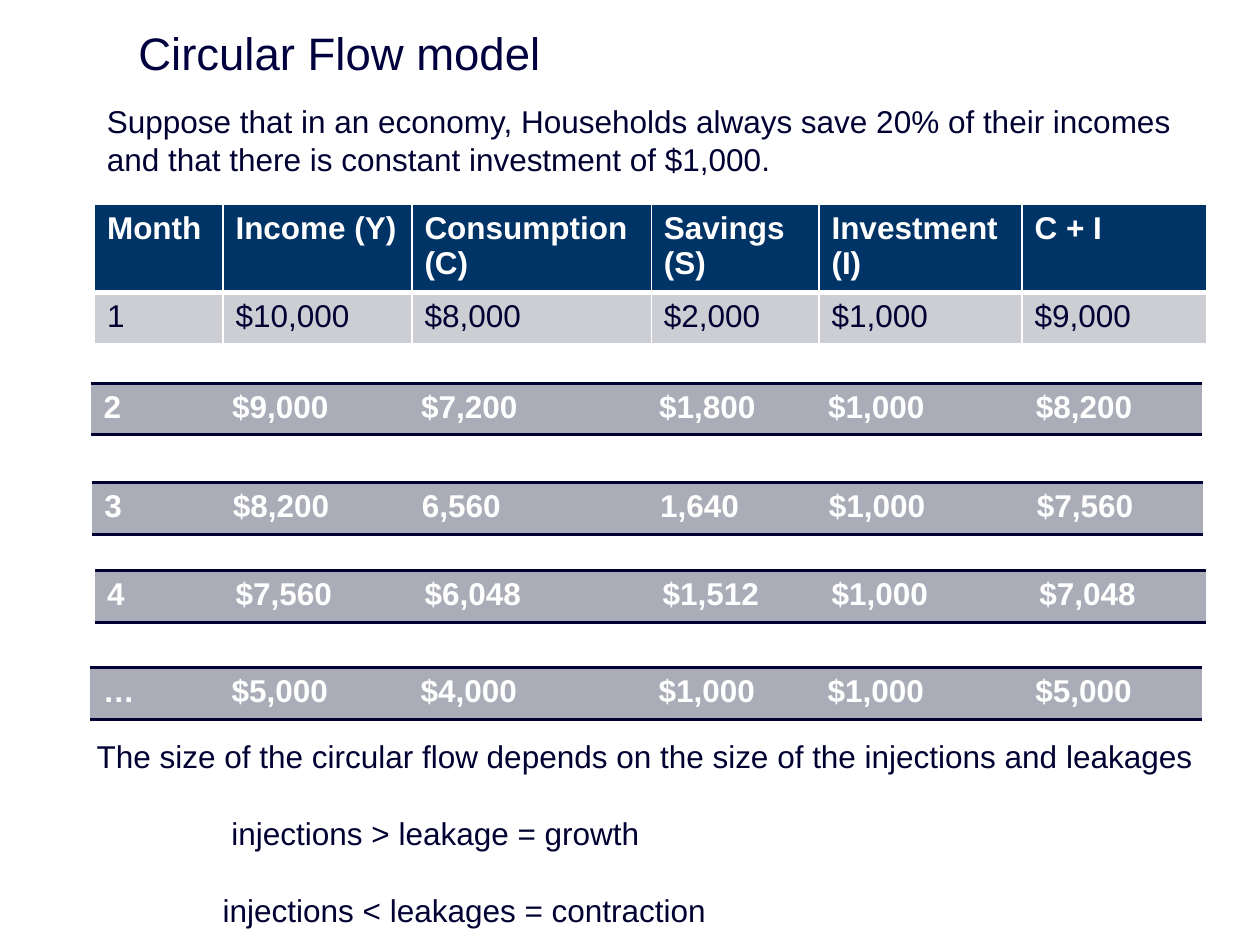
from dataclasses import dataclass

from lxml import etree
from pptx import Presentation
from pptx import util as u
from pptx.dml.color import RGBColor
from pptx.enum import text as t
from pptx.oxml import ns

COLORS = {
    "title": "00003E",
    "text": "000032",
    "white": "FFFFFF",
    "header": "003366",
    "first_month": "CCCED3",
    "later_month": "AAADB8",
}
FONT = "Arial"
BODY_SIZE = 18
ROW_HEIGHT = 29.5
FIRST_WIDTHS = [73.4, 108, 136.8, 95.8, 116, 105.8]
LATER_WIDTHS = [73.4, 108, 136.1, 96.5, 118.8, 102.2]


@dataclass
class Border:
    color: str
    width: float


@dataclass
class RowStyle:
    fill: str
    color: str
    bold: bool
    height: float
    borders: dict[str, Border]


@dataclass
class Month:
    left: float
    top: float
    values: list[str]


THIN = Border("white", 1)
THICK = Border("white", 3)
RULE = Border("text", 2)
HEADER_STYLE = RowStyle("header", "white", True, 47,
                        {"L": THIN, "R": THIN, "T": THIN, "B": THICK})
FIRST_STYLE = RowStyle("first_month", "text", False, ROW_HEIGHT,
                       {"L": THIN, "R": THIN, "T": THICK, "B": THIN})
LATER_STYLE = RowStyle("later_month", "white", True, ROW_HEIGHT,
                       {"T": RULE, "B": RULE})

HEADINGS = ["Month", "Income (Y)", "Consumption (C)", "Savings (S)",
            "Investment (I)", "C + I"]
FIRST_MONTH = ["1", "$10,000", "$8,000", "$2,000", "$1,000", "$9,000"]
LATER_MONTHS = [
    Month(52, 219, ["2", "$9,000", "$7,200", "$1,800", "$1,000", "$8,200"]),
    Month(52.5, 275.8, ["3", "$8,200", "6,560", "1,640", "$1,000", "$7,560"]),
    Month(54, 326, ["4", "$7,560", "$6,048", "$1,512", "$1,000", "$7,048"]),
    Month(51.7, 381.6, ["…", "$5,000", "$4,000", "$1,000", "$1,000", "$5,000"]),
]


def write(paragraph, content: str, *, size: float = BODY_SIZE,
          color: str = "text", bold: bool = False,
          before: float = 0, indent: float = 0) -> None:
    if indent:
        paragraph._p.get_or_add_pPr().set("marL", str(u.Pt(indent)))
    paragraph.space_before = u.Pt(before)
    run = paragraph.add_run()
    run.text = content
    run.font.name = FONT
    run.font.size = u.Pt(size)
    run.font.bold = bold
    run.font.color.rgb = RGBColor.from_string(COLORS[color])


def add_text_frame(slide, left: float, top: float, width: float, height: float):
    box = slide.shapes.add_textbox(u.Pt(left), u.Pt(top), u.Pt(width), u.Pt(height))
    box.text_frame.word_wrap = True
    return box.text_frame


def set_borders(cell, borders: dict[str, Border]) -> None:
    """Draw the given sides and hide the others."""
    properties = cell._tc.get_or_add_tcPr()
    for index, side in enumerate("LRTB"):
        line = etree.Element(ns.qn(f"a:ln{side}"))
        border = borders.get(side)
        if border:
            line.set("w", str(u.Pt(border.width)))
            fill = etree.SubElement(line, ns.qn("a:solidFill"))
            etree.SubElement(fill, ns.qn("a:srgbClr"), val=COLORS[border.color])
        else:
            etree.SubElement(line, ns.qn("a:noFill"))
        properties.insert(index, line)


def add_table(slide, left: float, top: float, widths: list[float],
              rows: list[tuple[RowStyle, list[str]]]) -> None:
    height = sum(style.height for style, _ in rows)
    frame = slide.shapes.add_table(len(rows), len(widths), u.Pt(left), u.Pt(top),
                                   u.Pt(sum(widths)), u.Pt(height))
    table = frame.table
    table.first_row = table.horz_banding = False
    for column, width in zip(table.columns, widths):
        column.width = u.Pt(width)
    for row, (style, values) in zip(table.rows, rows):
        row.height = u.Pt(style.height)
        for cell, value in zip(row.cells, values):
            cell.fill.solid()
            cell.fill.fore_color.rgb = RGBColor.from_string(COLORS[style.fill])
            set_borders(cell, style.borders)
            write(cell.text_frame.paragraphs[0], value,
                  color=style.color, bold=style.bold)


def main() -> None:
    presentation = Presentation()
    presentation.slide_width = u.Pt(720)
    presentation.slide_height = u.Pt(540)
    slide = presentation.slides.add_slide(presentation.slide_layouts[6])

    title = add_text_frame(slide, 72, 11.5, 648, 36.7)
    title.vertical_anchor = t.MSO_ANCHOR.MIDDLE
    write(title.paragraphs[0], "Circular Flow model", size=26, color="title")

    premise = add_text_frame(slide, 54, 54.7, 623.5, 51)
    write(premise.paragraphs[0],
          "Suppose that in an economy, Households always save 20% of their "
          "incomes and that there is constant investment of $1,000.")

    add_table(slide, 54, 116.8, FIRST_WIDTHS,
              [(HEADER_STYLE, HEADINGS), (FIRST_STYLE, FIRST_MONTH)])
    for month in LATER_MONTHS:
        add_table(slide, month.left, month.top, LATER_WIDTHS,
                  [(LATER_STYLE, month.values)])

    conclusion = add_text_frame(slide, 48.2, 417.6, 680.4, 138.2)
    write(conclusion.paragraphs[0],
          "The size of the circular flow depends on the size of the "
          "injections and leakages")
    for outcome, indent in [("injections > leakage = growth", 77),
                            ("injections < leakages = contraction", 72)]:
        write(conclusion.add_paragraph(), outcome, before=22.4, indent=indent)

    presentation.save("out.pptx")


if __name__ == "__main__":
    main()
